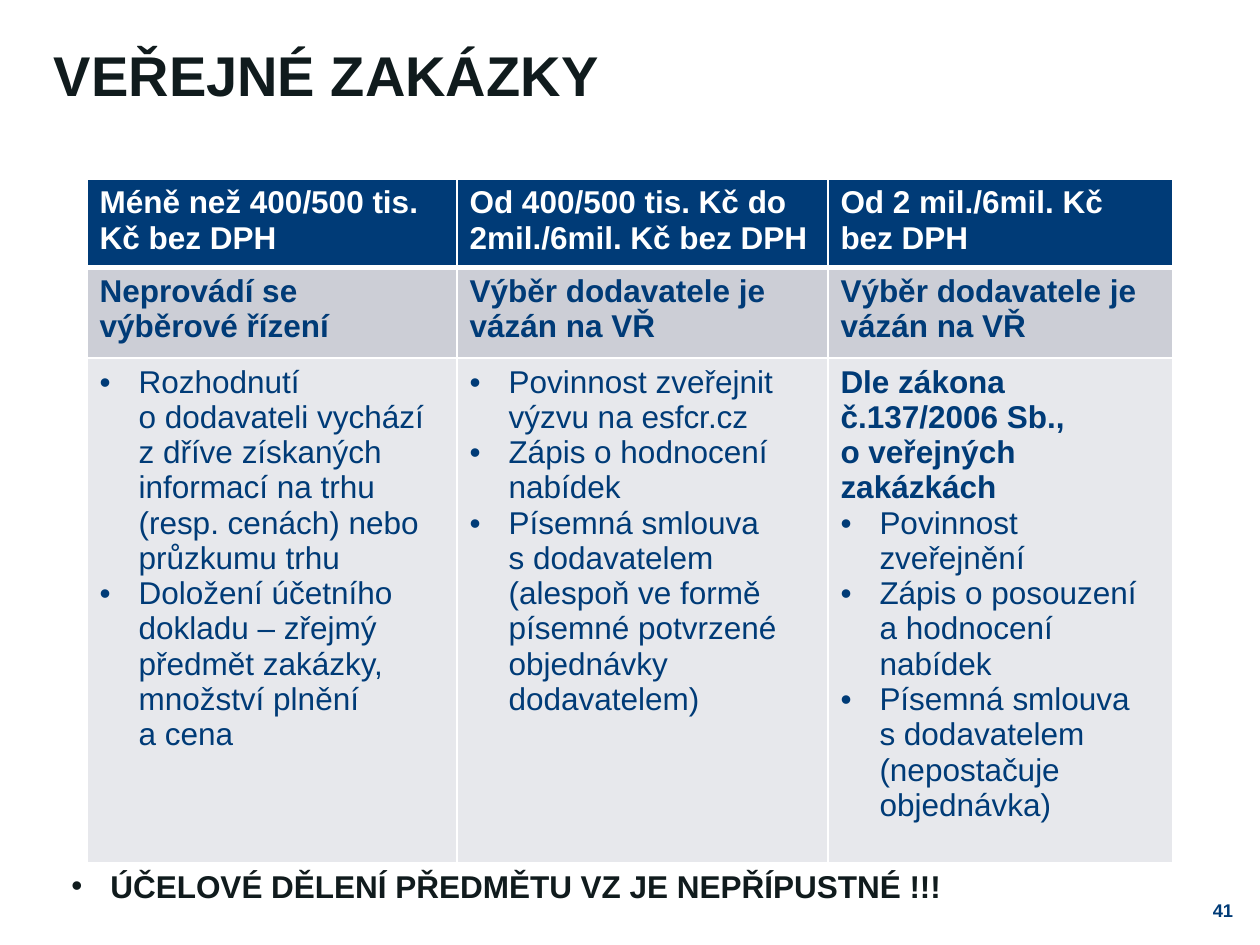
import pptx
import pptx.dml.color
import pptx.enum.text
import pptx.oxml
import pptx.oxml.ns
import pptx.util

EMU_PER_PX = 914400 / 126
NAVY, INK, WHITE = "003B77", "101B1D", "FFFFFF"
ROW_FILLS = [NAVY, "CCCED6", "E7E8EC"]
BULLET_INDENT = 39

HEADINGS = [
    "Méně než 400/500 tis. Kč bez DPH",
    "Od 400/500 tis. Kč do 2mil./6mil. Kč bez DPH",
    "Od 2 mil./6mil. Kč bez DPH",
]
PROCEDURES = [
    "Neprovádí se výběrové řízení",
    "Výběr dodavatele je vázán na VŘ",
    "Výběr dodavatele je vázán na VŘ",
]
LEADS = ["", "", "Dle zákona č.137/2006 Sb., \no veřejných zakázkách"]
DUTIES = [
    [
        "Rozhodnutí \no dodavateli vychází z dříve získaných informací na trhu (resp. cenách) nebo průzkumu trhu",
        "Doložení účetního dokladu – zřejmý předmět zakázky, množství plnění \na cena",
    ],
    [
        "Povinnost zveřejnit výzvu na esfcr.cz",
        "Zápis o hodnocení nabídek",
        "Písemná smlouva \ns dodavatelem (alespoň ve formě písemné potvrzené objednávky dodavatelem)",
    ],
    [
        "Povinnost zveřejnění",
        "Zápis o posouzení a hodnocení nabídek",
        "Písemná smlouva \ns dodavatelem (nepostačuje objednávka)",
    ],
]


def px(length):
    return pptx.util.Emu(round(length * EMU_PER_PX))


def color(code):
    return pptx.dml.color.RGBColor.from_string(code)


def apply(target, values):
    for name, value in values.items():
        setattr(target, name, value)


def add_bullet(paragraph):
    properties = paragraph._p.get_or_add_pPr()
    properties.set("marL", str(px(BULLET_INDENT)))
    properties.set("indent", str(-px(BULLET_INDENT)))
    properties.append(pptx.oxml.parse_xml(
        f'<a:buFont {pptx.oxml.ns.nsdecls("a")} typeface="Arial"/>'))
    properties.append(pptx.oxml.parse_xml(
        f'<a:buChar {pptx.oxml.ns.nsdecls("a")} char="•"/>'))


def write(frame, lines, tint, size=18):
    for index, (text, bold, bulleted) in enumerate(lines):
        paragraph = frame.paragraphs[0] if index == 0 else frame.add_paragraph()
        paragraph.text = text
        if bulleted:
            add_bullet(paragraph)
        for run in paragraph.runs:
            apply(run.font, {"name": "Arial", "size": pptx.util.Pt(size), "bold": bold})
            run.font.color.rgb = color(tint)


def add_text(slide, box, line, tint, size, frame_format):
    frame = slide.shapes.add_textbox(*map(px, box)).text_frame
    apply(frame, {"word_wrap": True, **frame_format})
    write(frame, [line], tint, size)
    return frame


def add_title(slide, box):
    add_text(slide, box, ("VEŘEJNÉ ZAKÁZKY", True, False), INK, 32, {
        "vertical_anchor": pptx.enum.text.MSO_ANCHOR.MIDDLE,
        "margin_left": px(5), "margin_right": px(5),
        "margin_top": 0, "margin_bottom": 0,
    })


def add_warning(slide, box):
    warning = ("ÚČELOVÉ DĚLENÍ PŘEDMĚTU VZ JE NEPŘÍPUSTNÉ !!!", True, True)
    add_text(slide, box, warning, INK, 18,
             {"auto_size": pptx.enum.text.MSO_AUTO_SIZE.SHAPE_TO_FIT_TEXT})


def add_page_number(slide, box):
    frame = add_text(slide, box, ("41", True, False), NAVY, 10.5, {
        "vertical_anchor": pptx.enum.text.MSO_ANCHOR.MIDDLE,
        "margin_left": 0, "margin_right": 0, "margin_top": 0, "margin_bottom": 0,
    })
    frame.paragraphs[0].alignment = pptx.enum.text.PP_ALIGN.CENTER


def add_borders(cell, top, bottom):
    properties = cell._tc.get_or_add_tcPr()
    for side, points in {"L": 1, "R": 1, "T": top, "B": bottom}.items():
        properties.append(pptx.oxml.parse_xml(
            f'<a:ln{side} {pptx.oxml.ns.nsdecls("a")} w="{pptx.util.Pt(points)}">'
            f'<a:solidFill><a:srgbClr val="{WHITE}"/></a:solidFill></a:ln{side}>'))


def add_limits_table(slide, box, widths, heights):
    table = slide.shapes.add_table(len(heights), len(widths), *map(px, box)).table
    for column, width in zip(table.columns, widths):
        column.width = px(width)
    for row, height in zip(table.rows, heights):
        row.height = px(height)
    duties = [
        ([(lead, True, False)] if lead else []) + [(duty, False, True) for duty in items]
        for lead, items in zip(LEADS, DUTIES)
    ]
    contents = [
        [[(heading, True, False)] for heading in HEADINGS],
        [[(procedure, True, False)] for procedure in PROCEDURES],
        duties,
    ]
    for row_index, row_contents in enumerate(contents):
        for column_index, lines in enumerate(row_contents):
            cell = table.cell(row_index, column_index)
            add_borders(cell, top=3 if row_index == 1 else 1,
                        bottom=3 if row_index == 0 else 1)
            cell.fill.solid()
            cell.fill.fore_color.rgb = color(ROW_FILLS[row_index])
            write(cell.text_frame, lines, WHITE if row_index == 0 else NAVY)


def main():
    deck = pptx.Presentation()
    apply(deck, {"slide_width": px(1260), "slide_height": px(945)})
    slide = deck.slides.add_slide(deck.slide_layouts[6])
    add_title(slide, (49, 0, 1160, 149))
    add_page_number(slide, (1191, 898, 64, 25))
    add_limits_table(slide, (87, 179, 1086, 616), [370, 371, 345], [83, 91, 442])
    add_warning(slide, (59, 861, 1142, 50))
    deck.save("out.pptx")


if __name__ == "__main__":
    main()
